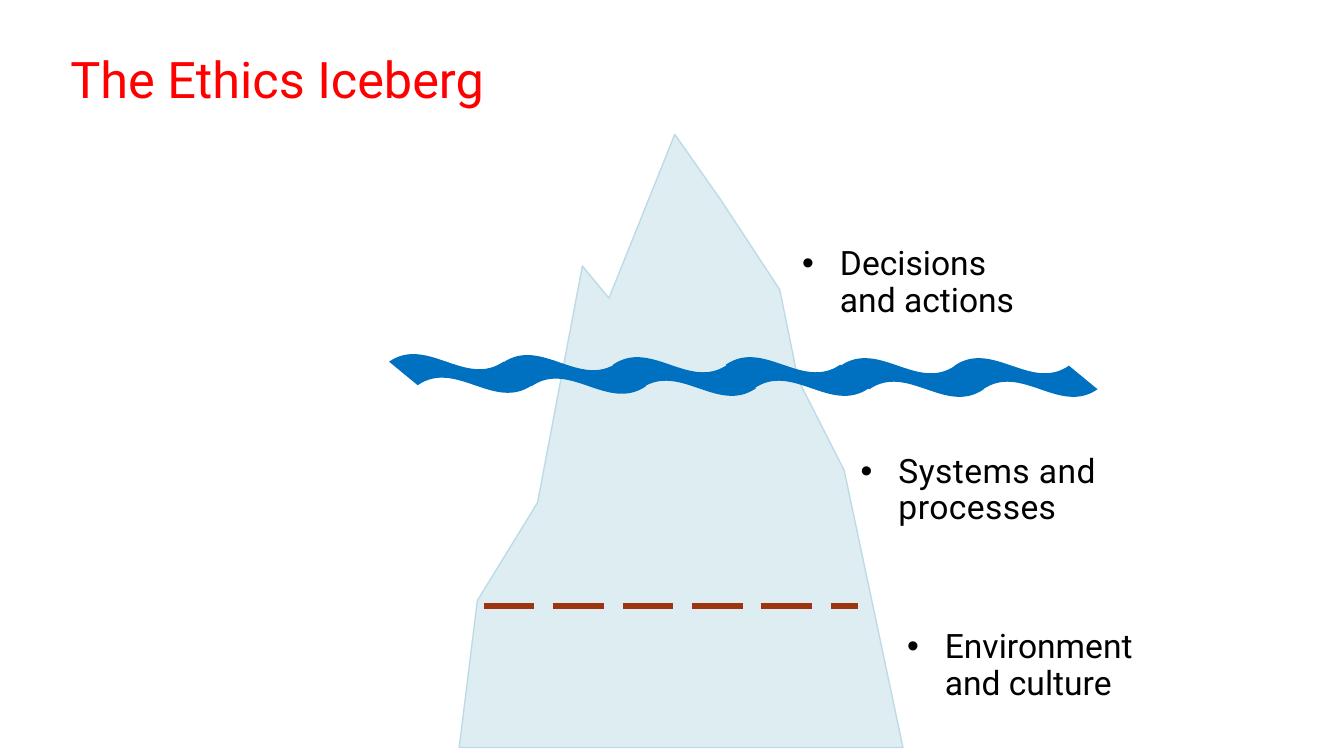
from lxml import etree
from pptx import Presentation
from pptx.dml.color import RGBColor
from pptx.enum.dml import MSO_LINE
from pptx.enum.shapes import MSO_CONNECTOR, MSO_SHAPE
from pptx.enum.text import MSO_ANCHOR
from pptx.oxml.ns import qn
from pptx.util import Pt

RED = RGBColor(0xFF, 0x00, 0x00)
BLACK = RGBColor(0x00, 0x00, 0x00)
ICE = RGBColor(0xDE, 0xED, 0xF2)
ICE_EDGE = RGBColor(0xBD, 0xDB, 0xE6)
WATER = RGBColor(0x00, 0x70, 0xC0)
RUST = RGBColor(0x9D, 0x36, 0x0E)

WAVE = MSO_SHAPE.WAVE
STRAIGHT = MSO_CONNECTOR.STRAIGHT
LONG_DASH = MSO_LINE.LONG_DASH
TOP = MSO_ANCHOR.TOP
MIDDLE = MSO_ANCHOR.MIDDLE

ICEBERG = [
    (327.6, 534.2), (645.1, 534.2), (603.4, 335.5), (570.2, 271.4),
    (556.6, 207.4), (514.8, 143.3), (481.7, 96.5), (434.9, 213.1),
    (416.2, 190.1), (383.8, 359.3), (341.3, 429.1),
]
WAVES = [
    (277.9, 252.7), (359.3, 253.4), (437.8, 254.9),
    (518.4, 254.9), (600.5, 255.6), (681.8, 255.6),
]
LABELS = [
    ("Decisions\vand actions", 565.9, 172.8, 180, 84.2, 0),
    ("Environment\vand culture", 640.8, 446.4, 210.2, 72, 0),
    ("Systems and processes", 607.7, 321.1, 210.2, 72, 0.3),
]


class IcebergSlide:
    font_name = "Roboto"
    line_spacing = 0.9
    indent = Pt(27)

    def __init__(self, page):
        self.page = page

    def text(self, words, left, top, width, height, size, color,
             anchor=TOP, bullet=False, tracking=0):
        box = self.page.shapes.add_textbox(Pt(left), Pt(top), Pt(width), Pt(height))
        frame = box.text_frame
        frame.word_wrap = True
        frame.vertical_anchor = anchor
        para = frame.paragraphs[0]
        para.text = words
        para.line_spacing = self.line_spacing
        if bullet:
            self.bullet(para)
        para.font.name = self.font_name
        para.font.size = Pt(size)
        para.font.color.rgb = color
        if tracking:
            for span in para.runs:
                span._r.get_or_add_rPr().set("spc", str(round(tracking * 100)))

    def bullet(self, para):
        properties = para._p.get_or_add_pPr()
        properties.set("marL", str(self.indent))
        properties.set("indent", str(-self.indent))
        etree.SubElement(properties, qn("a:buFont")).set("typeface", "Arial")
        etree.SubElement(properties, qn("a:buChar")).set("char", "•")

    def outline(self, points, fill, edge):
        builder = self.page.shapes.build_freeform(*points[0], scale=Pt(1))
        builder.add_line_segments(points[1:], close=True)
        shape = builder.convert_to_shape()
        shape.shadow.inherit = False
        shape.fill.solid()
        shape.fill.fore_color.rgb = fill
        shape.line.color.rgb = edge
        shape.line.width = Pt(1)

    def waterline(self, places, width, height, color):
        group = self.page.shapes.add_group_shape()
        for left, top in places:
            wave = group.shapes.add_shape(WAVE, Pt(left), Pt(top), Pt(width), Pt(height))
            wave.adjustments[0] = 0.206
            wave.adjustments[1] = 0.1
            wave.shadow.inherit = False
            wave.fill.solid()
            wave.fill.fore_color.rgb = color
            wave.line.fill.background()

    def dashed_line(self, left, right, top, color, weight):
        line = self.page.shapes.add_connector(
            STRAIGHT, Pt(left), Pt(top), Pt(right), Pt(top))
        line.line.color.rgb = color
        line.line.width = Pt(weight)
        line.line.dash_style = LONG_DASH
        etree.SubElement(line._element.spPr, qn("a:effectLst"))


def main():
    deck = Presentation()
    deck.slide_width = Pt(960)
    deck.slide_height = Pt(540)
    slide = IcebergSlide(deck.slides.add_slide(deck.slide_layouts[6]))

    slide.text("The Ethics Iceberg", 43.2, 31.7, 648, 54, 36, RED, anchor=MIDDLE)
    slide.outline(ICEBERG, ICE, ICE_EDGE)
    slide.waterline(WAVES, 102.2, 28.1, WATER)
    slide.dashed_line(345.6, 612.7, 432.7, RUST, 4.5)
    for words, left, top, width, height, tracking in LABELS:
        slide.text(words, left, top, width, height, 24, BLACK,
                   bullet=True, tracking=tracking)

    deck.save("out.pptx")


if __name__ == "__main__":
    main()
